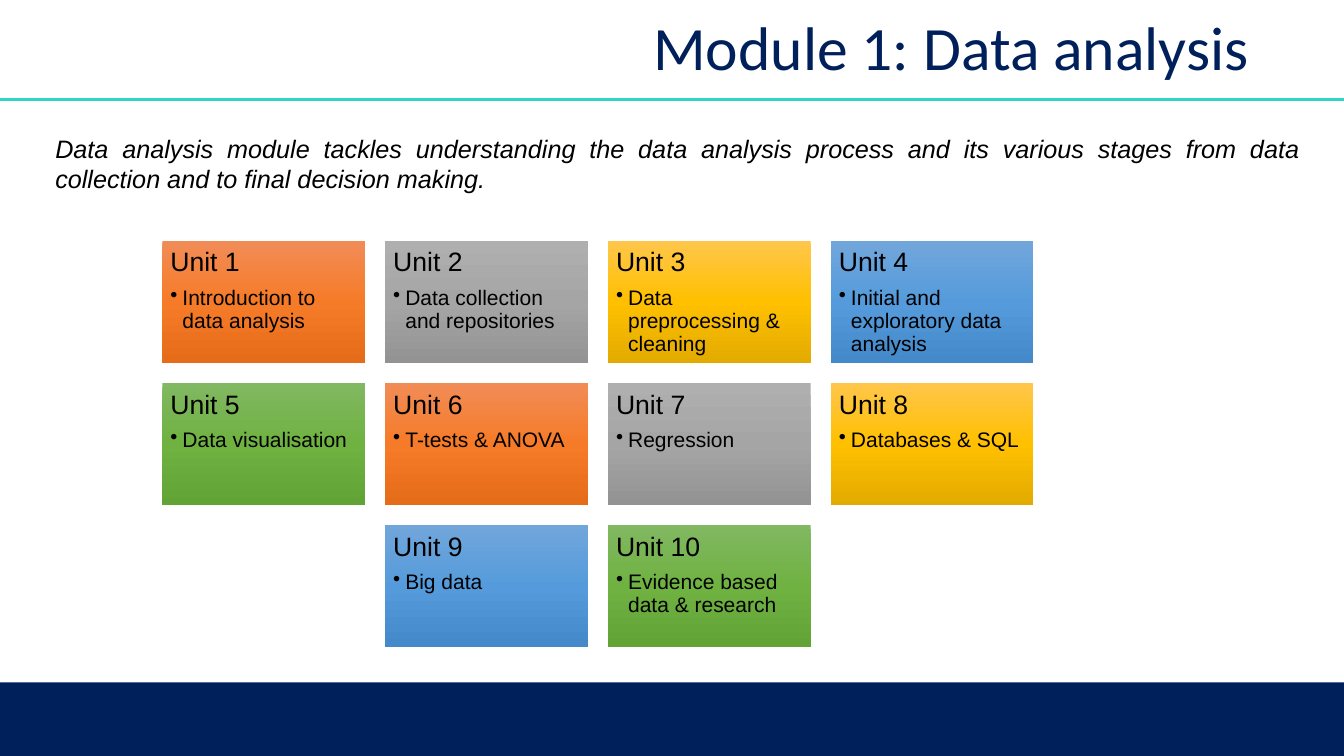
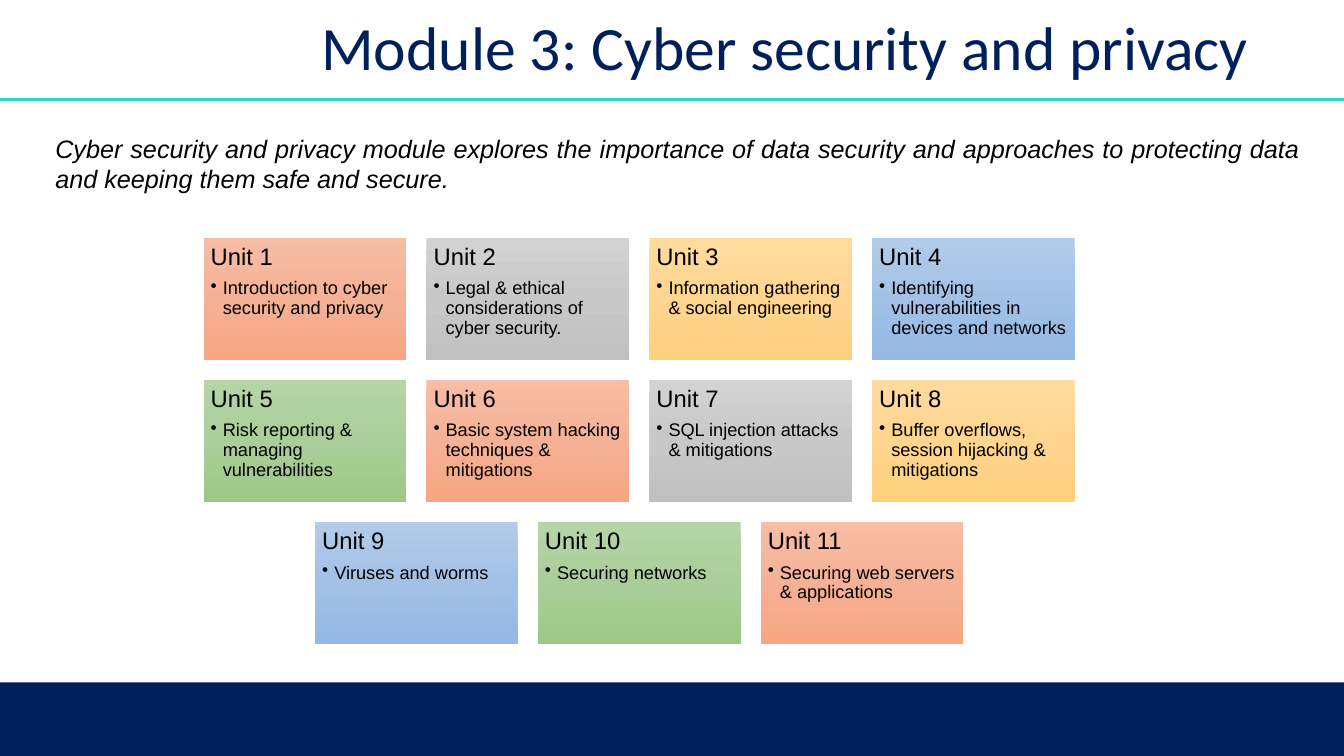
from itertools import cycle

from lxml.etree import SubElement
from pptx import Presentation
from pptx.dml.color import RGBColor
from pptx.enum.shapes import MSO_CONNECTOR as LINE, MSO_SHAPE as SHAPE
from pptx.enum.text import MSO_ANCHOR as ANCHOR, PP_ALIGN as ALIGN
from pptx.oxml.ns import qn
from pptx.util import Inches, Pt

# Shared style
NAVY, TEAL, BLACK = "00205B", "2CD5C4", "000000"
WIDE, HIGH = 13.33, 7.5
BOX_W, BOX_H, GAP, COLS = 2.01, 1.21, 0.2, 4

# Each tone is the top, middle and bottom colour of a gradient
STRONG = [
    ("F18C57", "F67B28", "E56C19"),
    ("AFAFAF", "A5A5A5", "939393"),
    ("FFC64B", "FFC000", "E3AB00"),
    ("71A6DB", "559BDB", "448ACA"),
    ("81B861", "6FB242", "62A336"),
]
PALE = [
    ("F7BDA5", "F5B196", "F8A582"),
    ("D2D2D2", "C8C8C8", "C0C0C0"),
    ("FFDB9E", "FFD590", "FFD07C"),
    ("B1CBE9", "A3C1E5", "93B9E4"),
    ("B5D5A7", "AACE9A", "9CC987"),
]

# Title, summary, units, tones, grid left and top, inset, head and body size
MODULES = [
    (
        "Module 1: Data analysis",
        "Data analysis module tackles understanding the data analysis process "
        "and its various stages from data collection and to final decision making.",
        [
            "Introduction to data analysis",
            "Data collection and repositories",
            "Data preprocessing & cleaning",
            "Initial and exploratory data analysis",
            "Data visualisation",
            "T-tests & ANOVA",
            "Regression",
            "Databases & SQL",
            "Big data",
            "Evidence based data & research",
        ],
        STRONG, 1.61, 2.39, 0.08, 19, 15,
    ),
    (
        "Module 3: Cyber security and privacy",
        "Cyber security and privacy module explores the importance of data security "
        "and approaches to protecting data and keeping them safe and secure.",
        [
            "Introduction to cyber security and privacy",
            "Legal & ethical considerations of cyber security.",
            "Information gathering & social engineering",
            "Identifying vulnerabilities in devices and networks",
            "Risk reporting & managing vulnerabilities",
            "Basic system hacking techniques & mitigations",
            "SQL injection attacks & mitigations",
            "Buffer overflows, session hijacking & mitigations",
            "Viruses and worms",
            "Securing networks",
            "Securing web servers & applications",
        ],
        PALE, 2.02, 2.36, 0.07, 17, 13,
    ),
]


def rgb(code):
    return RGBColor.from_string(code)


def write(para, text, size, font="Arial", color=BLACK, align=ALIGN.LEFT):
    para.alignment = align
    run = para.add_run()
    run.text = text
    run.font.size = Pt(size)
    run.font.name = font
    run.font.color.rgb = rgb(color)
    return run


deck = Presentation()
deck.slide_width, deck.slide_height = Inches(WIDE), Inches(HIGH)

for title, about, units, tones, left, top, inset, head, body in MODULES:
    slide = deck.slides.add_slide(deck.slide_layouts[6])
    shapes = slide.shapes

    # Rule under the title
    rule = shapes.add_connector(LINE.STRAIGHT, 0, Inches(0.99), Inches(WIDE), Inches(0.99))
    rule.line.color.rgb = rgb(TEAL)
    rule.line.width = Pt(2)
    SubElement(rule._element.spPr, qn("a:effectLst"))

    # Bottom band
    band = shapes.add_shape(SHAPE.RECTANGLE, 0, Inches(6.77), Inches(WIDE), Inches(0.73))
    band.shadow.inherit = False
    band.fill.solid()
    band.fill.fore_color.rgb = rgb(NAVY)
    band.line.fill.background()

    # Title
    frame = shapes.add_textbox(Inches(2.7), Inches(0.14), Inches(9.79), Inches(0.72)).text_frame
    frame.word_wrap = True
    frame.vertical_anchor = ANCHOR.MIDDLE
    frame.paragraphs[0].line_spacing = 0.9
    write(frame.paragraphs[0], title, 44, "Calibri", NAVY, ALIGN.RIGHT)

    # Summary
    frame = shapes.add_textbox(Inches(0.45), Inches(1.27), Inches(12.54), Inches(0.71)).text_frame
    frame.word_wrap = True
    write(frame.paragraphs[0], about, 18, align=ALIGN.JUSTIFY).font.italic = True

    # Unit boxes, with a short last row centred
    for i, (topic, tone) in enumerate(zip(units, cycle(tones))):
        row, col = divmod(i, COLS)
        count = min(COLS, len(units) - row * COLS)
        x = left + (col + (COLS - count) / 2) * (BOX_W + GAP)
        y = top + row * (BOX_H + GAP)
        box = shapes.add_shape(SHAPE.RECTANGLE, Inches(x), Inches(y), Inches(BOX_W), Inches(BOX_H))
        box.shadow.inherit = False
        box.line.fill.background()

        # Three-stop gradient, top to bottom
        box.fill.gradient()
        box.fill.gradient_angle = 270
        stops = box._element.spPr.find(qn("a:gradFill")).find(qn("a:gsLst"))
        stops.clear()
        for pos, code in zip((0, 50000, 100000), tone):
            stop = SubElement(stops, qn("a:gs"), pos=str(pos))
            SubElement(stop, qn("a:srgbClr"), val=code)

        # Unit number and bulleted topic
        frame = box.text_frame
        frame.word_wrap = True
        frame.vertical_anchor = ANCHOR.TOP
        frame.margin_left = frame.margin_right = Inches(inset)
        frame.margin_top = frame.margin_bottom = Inches(inset)
        name, item = frame.paragraphs[0], frame.add_paragraph()
        for para, size, after in ((name, head, 0.35), (item, body, 0.15)):
            para.line_spacing = 0.9
            para.space_after = Pt(round(size * after))
        props = item._p.get_or_add_pPr()
        props.set("marL", str(Inches(0.12)))
        props.set("indent", str(-Inches(0.12)))
        SubElement(props, qn("a:buChar"), char="•")
        write(name, f"Unit {i + 1}", head)
        write(item, topic, body)

deck.save("out.pptx")
